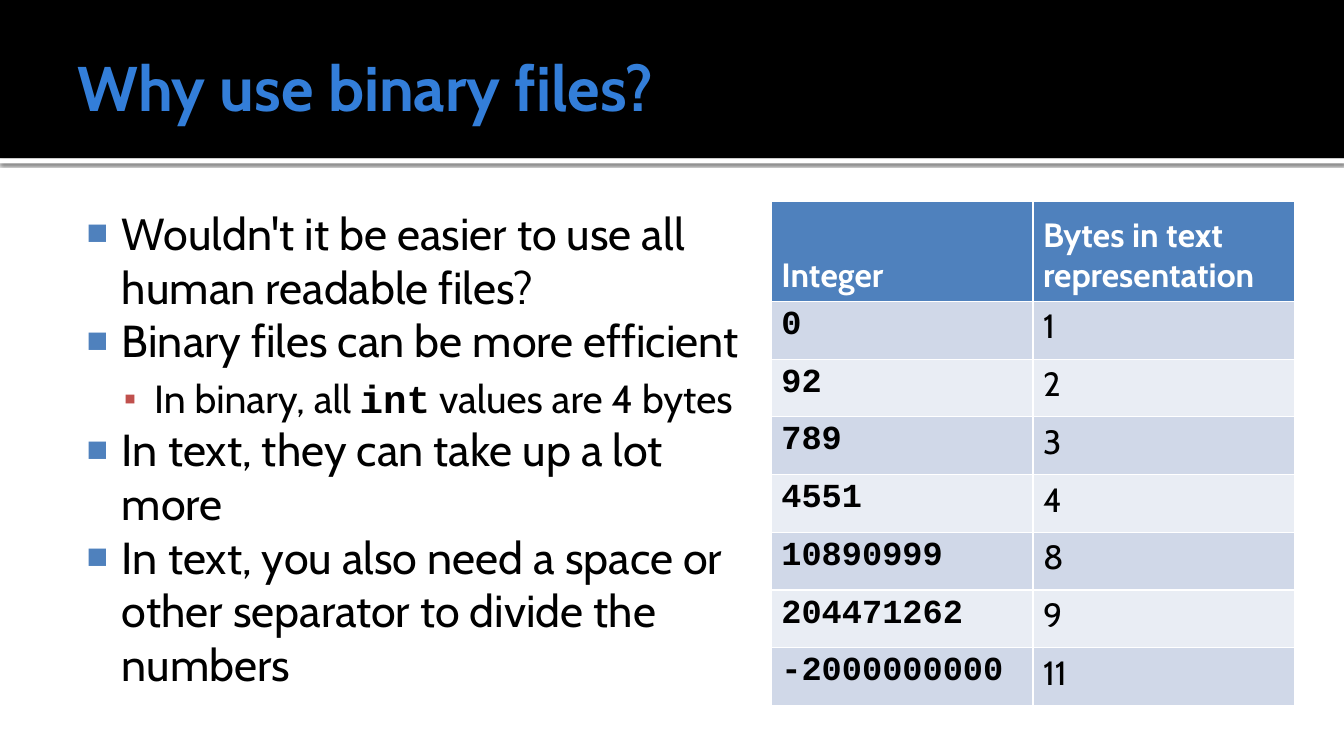
from lxml import etree
from pptx import Presentation
from pptx.dml.color import RGBColor
from pptx.enum.shapes import MSO_SHAPE as Shape
from pptx.enum.text import MSO_ANCHOR as Anchor
from pptx.oxml.ns import qn
from pptx.util import Inches, Pt

COLORS = {"black": "000000", "white": "FFFFFF", "title": "337ED9", "blue": "4F81BD",
          "red": "C0504D", "odd": "D0D8E8", "even": "E9EDF4"}
BODY_FONT, CODE_FONT = "Cabin", "Courier New"
WIDTH, HEIGHT = 13.33, 7.5
BAND_HEIGHT, RULE_HEIGHT = 1.57, 0.05
HEADER_HEIGHT = 0.99

LEVELS = [
    {"left": 0.48, "hang": 0.35, "mark": "■", "color": "blue", "scale": 80, "size": 32, "before": 0},
    {"left": 0.8, "hang": 0.3, "mark": "▪", "color": "red", "scale": 90, "size": 28, "before": 5.6},
]
POINTS = [
    (0, ["Wouldn't it be easier to use all human readable files?"]),
    (0, ["Binary files can be more efficient"]),
    (1, ["In binary, all ", "int", " values are 4 bytes"]),
    (0, ["In text, they can take up a lot more"]),
    (0, ["In text, you also need a space or other separator to divide the numbers"]),
]
HEADINGS = ["Integer", "Bytes in text\nrepresentation"]
INTEGERS = ["0", "92", "789", "4551", "10890999", "204471262", "-2000000000"]


def rgb(name):
    """Return the named palette colour."""
    return RGBColor.from_string(COLORS[name])


def style(font, size, color="black", name=BODY_FONT, bold=False):
    """Set the face, size, colour and weight of a font."""
    font.name, font.size, font.bold = name, Pt(size), bold
    font.color.rgb = rgb(color)


def add_bar(slide, box, color):
    """Add a plain filled rectangle."""
    bar = slide.shapes.add_shape(Shape.RECTANGLE, *map(Inches, box))
    bar.shadow.inherit = False
    bar.fill.solid()
    bar.fill.fore_color.rgb = rgb(color)
    bar.line.fill.background()
    return bar


def add_shadow(bar):
    """Cast a soft shadow straight down."""
    effects = bar._element.spPr.find(qn("a:effectLst"))
    shadow = etree.SubElement(effects, qn("a:outerShdw"), blurRad=str(Pt(2.5)), dist=str(Pt(0.8)),
                              dir="5400000", algn="tl", rotWithShape="0")
    tint = etree.SubElement(shadow, qn("a:srgbClr"), val=COLORS["black"])
    etree.SubElement(tint, qn("a:alpha"), val="60000")


def add_frame(slide, box, margins):
    """Add a wrapping text box and return its text frame."""
    frame = slide.shapes.add_textbox(*map(Inches, box)).text_frame
    frame.word_wrap = True
    (frame.margin_left, frame.margin_top,
     frame.margin_right, frame.margin_bottom) = map(Inches, margins)
    return frame


def add_header(slide, box):
    """Draw the title band with the rule below it."""
    left, top, width, height = box
    add_shadow(add_bar(slide, (left, top + height, width, RULE_HEIGHT), "white"))
    add_bar(slide, box, "black")
    title = add_frame(slide, (left + 0.67, top + 0.17, 12, 1.37), (0.1, 0.05, 0.05, 0.05))
    title.vertical_anchor = Anchor.MIDDLE
    title.text = "Why use binary files?"
    style(title.paragraphs[0].font, 45, "title", bold=True)


def set_bullet(point, level):
    """Give a paragraph the bullet and indent of its level."""
    props = point._p.get_or_add_pPr()
    props.set("marL", str(Inches(level["left"])))
    props.set("indent", str(-Inches(level["hang"])))
    tint = etree.SubElement(props, qn("a:buClr"))
    etree.SubElement(tint, qn("a:srgbClr"), val=COLORS[level["color"]])
    etree.SubElement(props, qn("a:buSzPct"), val=str(level["scale"] * 1000))
    etree.SubElement(props, qn("a:buFont"), typeface="Arial")
    etree.SubElement(props, qn("a:buChar"), char=level["mark"])


def add_points(slide, box):
    """Write the bulleted reasons, with every second run as code."""
    frame = add_frame(slide, box, (0.06, 0.1, 0.1, 0.05))
    for index, (depth, parts) in enumerate(POINTS):
        point = frame.add_paragraph() if index else frame.paragraphs[0]
        level = LEVELS[depth]
        point.level = depth
        point.space_before = Pt(level["before"])
        set_bullet(point, level)
        if len(parts) == 1:
            point.text = parts[0]
            style(point.font, level["size"])
            continue
        for position, part in enumerate(parts):
            run = point.add_run()
            run.text = part
            code = position % 2 == 1
            style(run.font, level["size"], name=CODE_FONT if code else BODY_FONT, bold=code)


def fill_cell(cell, text, fill, **font):
    """Fill one table cell and write its text."""
    cell.fill.solid()
    cell.fill.fore_color.rgb = rgb(fill)
    cell.text = text
    for paragraph in cell.text_frame.paragraphs:
        style(paragraph.font, 24, **font)


def add_sizes(slide, box):
    """Tabulate how many characters each integer takes as text."""
    height = box[3]
    table = slide.shapes.add_table(len(INTEGERS) + 1, len(HEADINGS), *map(Inches, box)).table
    for row in table.rows:
        row.height = Inches((height - HEADER_HEIGHT) / len(INTEGERS))
    table.rows[0].height = Inches(HEADER_HEIGHT)
    for column, heading in enumerate(HEADINGS):
        cell = table.cell(0, column)
        fill_cell(cell, heading, "blue", color="white", bold=True)
        cell.vertical_anchor = Anchor.BOTTOM
    for row, integer in enumerate(INTEGERS, 1):
        band = "odd" if row % 2 else "even"
        fill_cell(table.cell(row, 0), integer, band, name=CODE_FONT, bold=True)
        fill_cell(table.cell(row, 1), str(len(integer)), band)


def main():
    """Build and save the slide."""
    deck = Presentation()
    deck.slide_width, deck.slide_height = Inches(WIDTH), Inches(HEIGHT)
    slide = deck.slides.add_slide(deck.slide_layouts[6])
    add_header(slide, (0, 0, WIDTH, BAND_HEIGHT))
    add_points(slide, (0.67, 1.94, 6.83, 5.06))
    add_sizes(slide, (7.65, 2, 5.19, 5))
    deck.save("out.pptx")


if __name__ == "__main__":
    main()
